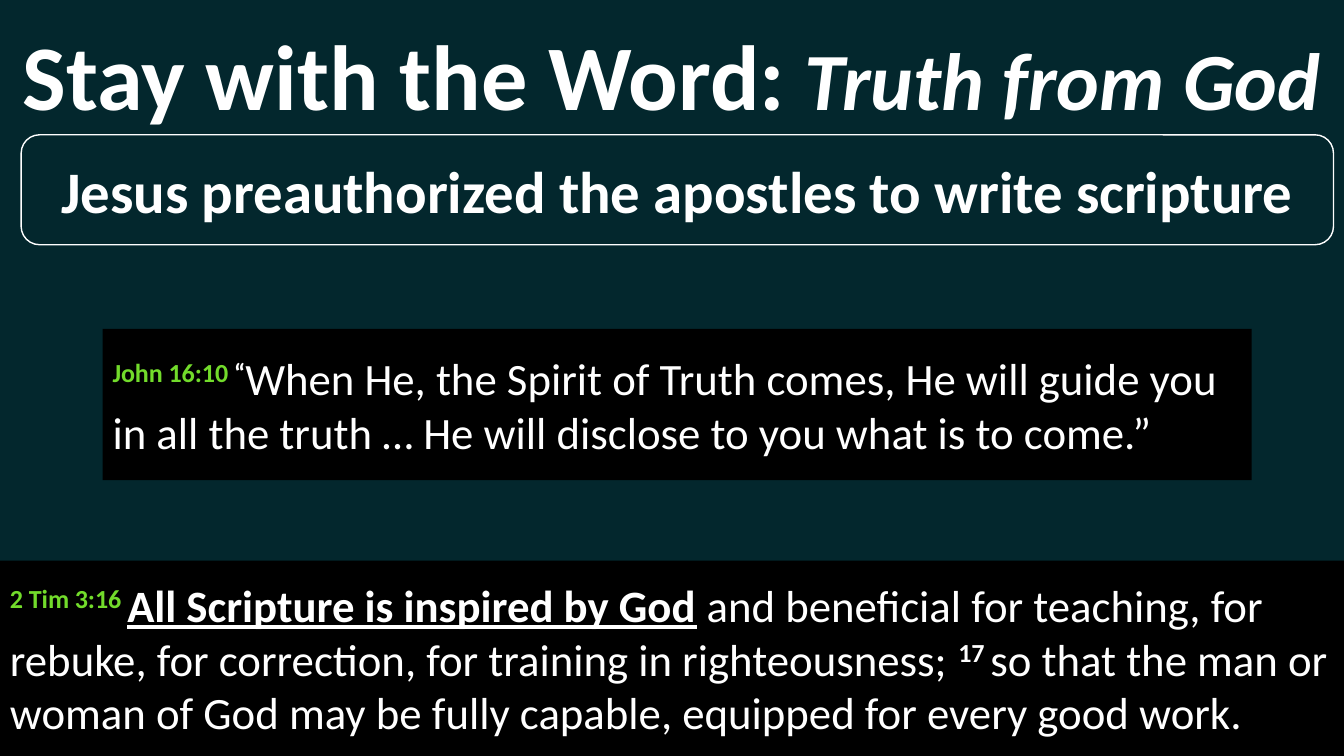
from pptx import Presentation
from pptx.dml.color import RGBColor
from pptx.enum.shapes import MSO_SHAPE
from pptx.enum.text import MSO_ANCHOR, MSO_AUTO_SIZE, PP_ALIGN
from pptx.util import Pt

RECTANGLE, ROUNDED = MSO_SHAPE.RECTANGLE, MSO_SHAPE.ROUNDED_RECTANGLE
TOP, MIDDLE = MSO_ANCHOR.TOP, MSO_ANCHOR.MIDDLE
LEFT, CENTER = PP_ALIGN.LEFT, PP_ALIGN.CENTER
NO_AUTOFIT = MSO_AUTO_SIZE.NONE
FONT = "Calibri"
TEAL, BLACK, WHITE, GREEN = "03272D", "000000", "FFFFFF", "72DB2B"
WIDTH, HEIGHT = 960, 540


def paint(target, color):
    """Give a fill or line fill one solid colour."""
    target.solid()
    target.fore_color.rgb = RGBColor.from_string(color)


def format_paragraph(shape, size, align, anchor):
    """Set the frame and shared font of a shape, and return its paragraph."""
    frame = shape.text_frame
    frame.word_wrap = True
    frame.auto_size = NO_AUTOFIT
    frame.vertical_anchor = anchor
    paragraph = frame.paragraphs[0]
    paragraph.alignment = align
    paragraph.font.name = FONT
    paragraph.font.size = Pt(size)
    paint(paragraph.font.fill, WHITE)
    return paragraph


def add_span(paragraph, text, bold=False, raised=False, color=None, underline=None):
    """Append a run with its emphasis and return it."""
    span = paragraph.add_run()
    span.text = text
    span.font.bold = bold
    span.font.underline = underline
    if color:
        paint(span.font.fill, color)
    if raised:
        span._r.get_or_add_rPr().set("baseline", "30000")
    return span


def add_title(slide, left, top, width, height):
    """Place the title with its italic subtitle."""
    title = slide.shapes.title
    title.left, title.top, title.width, title.height = map(Pt, (left, top, width, height))
    paragraph = format_paragraph(title, 66, LEFT, TOP)
    title.text_frame.margin_left = Pt(16.2)
    add_span(paragraph, "Stay with the Word:", bold=True)
    add_span(paragraph, " ", bold=True).font.size = Pt(60)
    subtitle = add_span(paragraph, "Truth from God", bold=True)
    subtitle.font.size = Pt(58)
    subtitle.font.italic = True


def add_panel(slide, kind, fill, left, top, width, height):
    """Add a filled shape without shadow or outline."""
    panel = slide.shapes.add_shape(kind, Pt(left), Pt(top), Pt(width), Pt(height))
    panel.shadow.inherit = False
    paint(panel.fill, fill)
    panel.line.fill.background()
    return panel


def add_verse(slide, reference, spans, *box):
    """Add a black panel with a raised reference and the verse."""
    panel = add_panel(slide, RECTANGLE, BLACK, *box)
    paragraph = format_paragraph(panel, 32, LEFT, MIDDLE)
    add_span(paragraph, reference + " ", bold=True, raised=True, color=GREEN)
    for text, style in spans:
        add_span(paragraph, text, **style)


def add_claim(slide, text, *box):
    """Add the outlined statement under the title."""
    panel = add_panel(slide, ROUNDED, TEAL, *box)
    paint(panel.line.fill, WHITE)
    panel.line.width = Pt(1)
    paragraph = format_paragraph(panel, 42, CENTER, MIDDLE)
    paragraph.font.bold = True
    paragraph.add_run().text = text


def main():
    """Build and save the deck."""
    deck = Presentation()
    deck.slide_width, deck.slide_height = Pt(WIDTH), Pt(HEIGHT)
    slide = deck.slides.add_slide(deck.slide_layouts[5])
    paint(slide.background.fill, TEAL)
    add_title(slide, 0, 9.4, WIDTH, 87)
    timothy = [
        ("All Scripture is inspired by God", {"bold": True, "underline": True}),
        (" and beneficial for teaching, for rebuke, for correction, "
         "for training in righteousness; ", {}),
        ("17 ", {"bold": True, "raised": True}),
        ("so that the man or woman of God may be fully capable, "
         "equipped for every good work.", {}),
    ]
    john = [
        ("“", {"bold": True, "raised": True}),
        ("When He, the Spirit of Truth comes, He will guide you in all the truth … "
         "He will disclose to you what is to come.”", {}),
    ]
    add_verse(slide, "2 Tim 3:16", timothy, 0, 400.4, WIDTH, HEIGHT - 400.4)
    add_verse(slide, "John 16:10", john, 73.3, 235, 820.8, 108)
    add_claim(slide, "Jesus preauthorized the apostles to write scripture",
              15.1, 96.3, 937.4, 78.5)
    deck.save("out.pptx")


if __name__ == "__main__":
    main()
